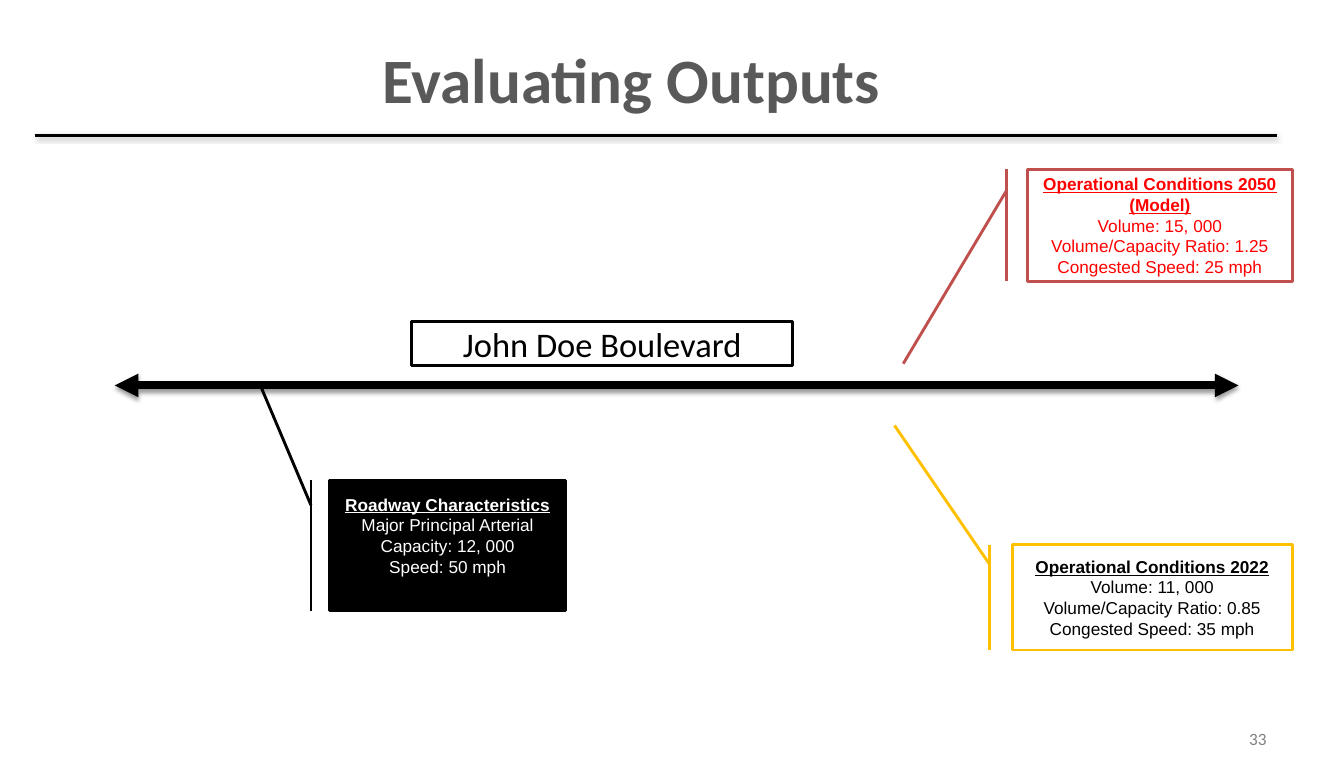
from pptx import Presentation
from pptx.dml.color import RGBColor
from pptx.enum.shapes import MSO_CONNECTOR, MSO_SHAPE
from pptx.enum.text import MSO_ANCHOR, PP_ALIGN
from pptx.oxml.ns import qn
from pptx.util import Inches, Pt
from lxml import etree

BLACK = RGBColor(0, 0, 0)
WHITE = RGBColor(255, 255, 255)
GRAY = RGBColor(0x59, 0x59, 0x59)
PALE = RGBColor(0x80, 0x80, 0x80)
RED = RGBColor(255, 0, 0)
BRICK = RGBColor(0xC0, 0x50, 0x4D)
GOLD = RGBColor(0xFF, 0xC0, 0)

STRAIGHT = MSO_CONNECTOR.STRAIGHT
RECT = MSO_SHAPE.RECTANGLE
CALLOUT = MSO_SHAPE.LINE_CALLOUT_1_BORDER_AND_ACCENT_BAR
TOP, MIDDLE = MSO_ANCHOR.TOP, MSO_ANCHOR.MIDDLE
CENTER, RIGHT = PP_ALIGN.CENTER, PP_ALIGN.RIGHT

TITLE = "Evaluating Outputs"
ROAD = "John Doe Boulevard"
PAGE = "33"

# box, pointer end (y, x as shares of the box), fill, line, text, bottom inset, lines
NOTES = [
    ((3.19, 4.65, 2.28, 1.26), (-0.71, -0.29), BLACK, BLACK, WHITE, 0.25,
     ["Roadway Characteristics", "Major Principal Arterial",
      "Capacity: 12, 000", "Speed: 50 mph"]),
    ((9.94, 1.64, 2.56, 1.08), (1.74, -0.47), WHITE, BRICK, RED, 0.05,
     ["Operational Conditions 2050 (Model)", "Volume: 15, 000",
      "Volume/Capacity Ratio: 1.25", "Congested Speed: 25 mph"]),
    ((9.79, 5.27, 2.71, 1.02), (-1.13, -0.42), WHITE, GOLD, BLACK, 0.05,
     ["Operational Conditions 2022", "Volume: 11, 000",
      "Volume/Capacity Ratio: 0.85", "Congested Speed: 35 mph"]),
]

# x from, x to, y, width, arrows
LINES = [(0.34, 12.35, 1.31, 2, False), (1.11, 11.98, 3.73, 5.5, True)]


def write(shape, lines, font, size, color, align=CENTER, anchor=MIDDLE,
          bold=False, head=False):
    """Fill the shape with one paragraph a line; head underlines the first."""
    frame = shape.text_frame
    frame.word_wrap = True
    frame.vertical_anchor = anchor
    for i, line in enumerate(lines):
        para = frame.add_paragraph() if i else frame.paragraphs[0]
        para.alignment = align
        run = para.add_run()
        run.text = line
        face = run.font
        face.name, face.size = font, Pt(size)
        face.color.rgb = color
        first = head and i == 0
        face.bold, face.underline = bold or first, first


def add_text(slide, box, *args, **kwargs):
    shape = slide.shapes.add_textbox(*map(Inches, box))
    write(shape, *args, **kwargs)


def add_box(slide, kind, box, fill, line):
    shape = slide.shapes.add_shape(kind, *map(Inches, box))
    shape.shadow.inherit = False
    shape.fill.solid()
    shape.fill.fore_color.rgb = fill
    shape.line.color.rgb = line
    shape.line.width = Pt(2)
    return shape


def add_line(slide, left, right, y, width, arrows):
    """Draw a level black line with a soft shadow below it."""
    line = slide.shapes.add_connector(
        STRAIGHT, Inches(left), Inches(y), Inches(right), Inches(y))
    line.line.color.rgb = BLACK
    line.line.width = Pt(width)
    props = line._element.spPr
    if arrows:
        for end in ("a:headEnd", "a:tailEnd"):
            etree.SubElement(props.find(qn("a:ln")), qn(end), type="triangle")
    effects = etree.SubElement(props, qn("a:effectLst"))
    shadow = etree.SubElement(
        effects, qn("a:outerShdw"), blurRad=str(Pt(3.1)), dist=str(Pt(1.6)),
        dir="5400000", rotWithShape="0")
    tint = etree.SubElement(shadow, qn("a:srgbClr"), val=str(BLACK))
    etree.SubElement(tint, qn("a:alpha"), val="38000")


def main():
    deck = Presentation()
    deck.slide_width, deck.slide_height = Inches(13), Inches(7.5)
    slide = deck.slides.add_slide(deck.slide_layouts[6])

    add_text(slide, (9.32, 6.95, 3.03, 0.4), [PAGE], "Calibri", 12, PALE,
             align=RIGHT)
    add_text(slide, (1.8, 0.34, 8.62, 1.16), [TITLE], "Calibri", 44, GRAY,
             anchor=TOP, bold=True)
    for line in LINES:
        add_line(slide, *line)

    road = add_box(slide, RECT, (3.98, 3.11, 3.69, 0.43), WHITE, BLACK)
    write(road, [ROAD], "Calibri", 24, BLACK)

    for box, tip, fill, line, color, inset, lines in NOTES:
        note = add_box(slide, CALLOUT, box, fill, line)
        for i, share in enumerate((0.19, -0.08, *tip)):
            note.adjustments[i] = share
        note.text_frame.margin_bottom = Inches(inset)
        write(note, lines, "Arial", 12, color, head=True)

    deck.save("out.pptx")


if __name__ == "__main__":
    main()
